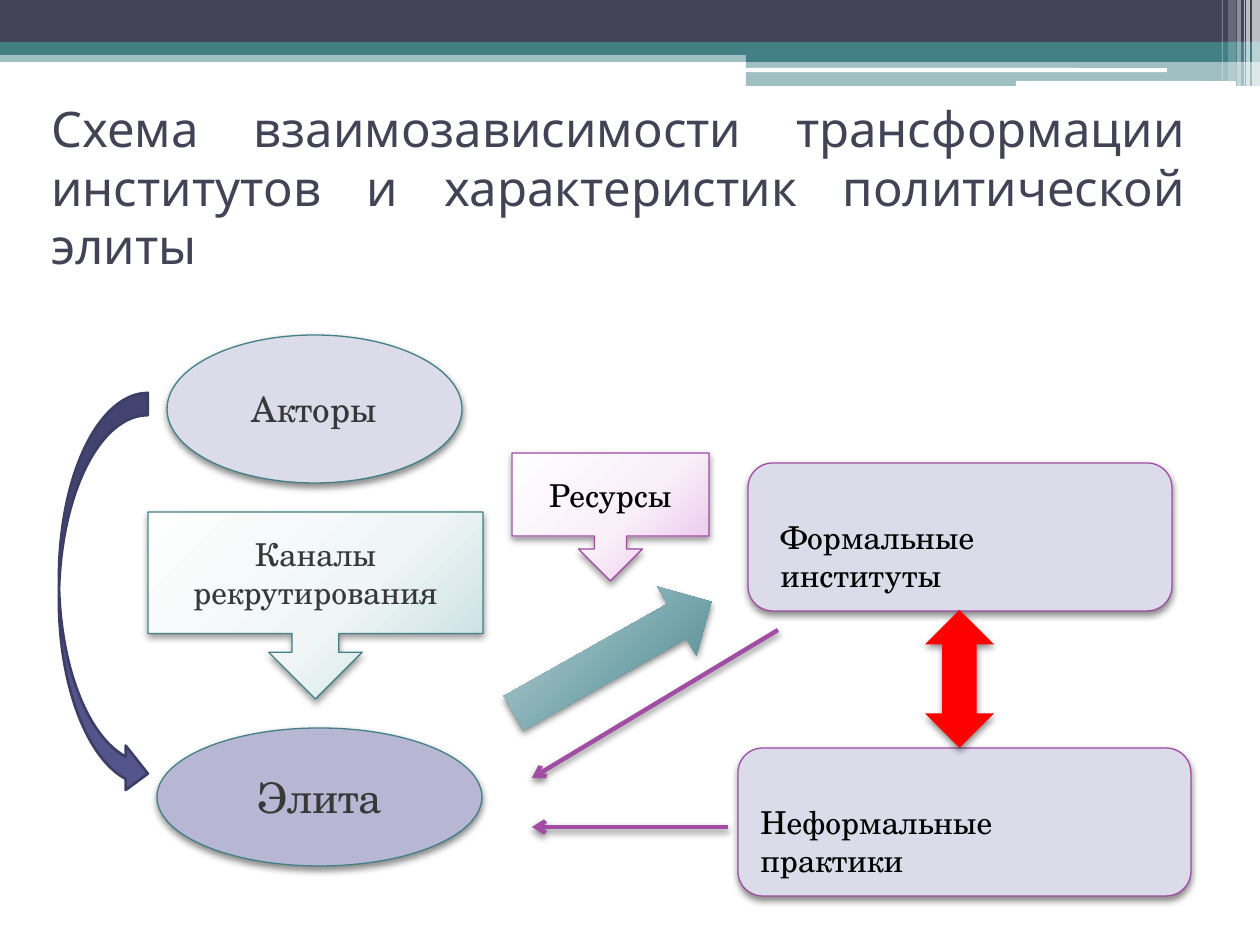
from lxml import etree
from pptx import Presentation
from pptx import util as u
from pptx.dml.color import RGBColor
from pptx.enum import shapes, text
from pptx.oxml import parse_xml
from pptx.oxml.ns import qn, nsdecls

SCALE = 914400 / 126
FONT = "TeX Gyre Schola"
KIND = shapes.MSO_SHAPE
COLORS = {
    "navy": "424456", "teal": "438086", "white": "FFFFFF", "black": "000000",
    "gray": "383838", "pale": "DBDBE9", "lilac": "B7B7D4", "plum": "A04DA3",
    "red": "FF0000", "indigo": "53548A", "edge": "3D3E66",
}
GRADS = {
    "mint": ("FEFEFE", "F0F6F6", "BFD9DD"),
    "steel": ("C7D7DA", "77A7AD", "3E777D"),
    "rose": ("FEFEFF", "F9EFF9", "E8BBEA"),
}


def px(n):
    return u.Emu(round(n * SCALE))


def rgb(name):
    return RGBColor.from_string(COLORS[name])


def shade(spot, alpha=45):
    props = spot._element.spPr
    glow = props.find(qn("a:effectLst"))
    if glow is None:
        glow = etree.SubElement(props, qn("a:effectLst"))
    glow.append(parse_xml(
        f'<a:outerShdw {nsdecls("a")} blurRad="50800" dist="25400" dir="5400000" '
        f'rotWithShape="0"><a:srgbClr val="000000"><a:alpha val="{alpha}000"/>'
        '</a:srgbClr></a:outerShdw>'))


def blend(shape, name):
    stops = "".join(
        f'<a:gs pos="{pos}000"><a:srgbClr val="{tone}"/></a:gs>'
        for pos, tone in zip((0, 55, 100), GRADS[name]))
    shape.fill.solid()
    props = shape._element.spPr
    props.replace(props.find(qn("a:solidFill")), parse_xml(
        f'<a:gradFill {nsdecls("a")} rotWithShape="1"><a:gsLst>{stops}</a:gsLst>'
        '<a:path path="circle"><a:fillToRect l="-40000" t="-90000" r="140000" '
        'b="190000"/></a:path></a:gradFill>'))


def add_form(slide, kind, box, fill, line=None, width=0.75, shadow=45):
    shape = slide.shapes.add_shape(kind, *map(px, box))
    shape.shadow.inherit = False
    if fill in GRADS:
        blend(shape, fill)
    else:
        shape.fill.solid()
        shape.fill.fore_color.rgb = rgb(fill)
    if line:
        shape.line.color.rgb = rgb(line)
        shape.line.width = u.Pt(width)
    else:
        shape.line.fill.background()
    if shadow:
        shade(shape, shadow)
    return shape


def add_bar(slide, box, fill, alpha=100, kind=KIND.RECTANGLE):
    bar = add_form(slide, kind, box, fill, shadow=0)
    if alpha < 100:
        tone = bar._element.spPr.find(qn("a:solidFill"))[0]
        etree.SubElement(tone, qn("a:alpha")).set("val", str(alpha * 1000))


def write(shape, words, size, color, align, anchor, font=FONT):
    frame = shape.text_frame
    frame.word_wrap = True
    frame.vertical_anchor = anchor
    par = frame.paragraphs[0]
    par.text = words
    par.alignment = align
    par.font.size = u.Pt(size)
    par.font.name = font
    par.font.color.rgb = rgb(color)


def add_node(slide, kind, box, fill, line, words, size, color, shadow=45):
    node = add_form(slide, kind, box, fill, line, shadow=shadow)
    write(node, words, size, color, text.PP_ALIGN.CENTER, text.MSO_ANCHOR.MIDDLE)


def add_label(slide, box, words):
    label = slide.shapes.add_textbox(*map(px, box))
    write(label, words, 18, "black", text.PP_ALIGN.LEFT, text.MSO_ANCHOR.TOP)


def add_arrow(slide, start, end):
    arrow = slide.shapes.add_connector(
        shapes.MSO_CONNECTOR.STRAIGHT, *map(px, start + end))
    arrow.line.color.rgb = rgb("plum")
    arrow.line.width = u.Pt(2.5)
    tip = etree.SubElement(arrow.line._get_or_add_ln(), qn("a:tailEnd"))
    tip.set("type", "arrow")
    shade(arrow)


def add_header(slide):
    add_bar(slide, (0, 50, 1260, 12), "teal", 50)
    add_bar(slide, (0, 0, 1260, 43), "navy")
    add_bar(slide, (0, 42, 1260, 13), "teal")
    add_bar(slide, (746, 49, 514, 13), "teal")
    add_bar(slide, (746, 61, 514, 25), "teal", 50)
    for box in ((745, 68, 422, 4), (1016, 81, 220, 5)):
        add_bar(slide, box, "white", kind=KIND.ROUNDED_RECTANGLE)
    for left, width, high, alpha in (
            (1252, 8, 86, 65), (1246, 4, 86, 65), (1244, 1, 86, 60),
            (1237, 4, 86, 40), (1228, 8, 81, 20), (1222, 1, 81, 30)):
        add_bar(slide, (left, 0, width, high), "white", alpha)


def add_title(slide):
    title = slide.shapes.add_textbox(*map(px, (39, 88, 1158, 197)))
    write(title, "Схема взаимозависимости трансформации институтов "
          "и характеристик политической элиты", 28, "navy",
          text.PP_ALIGN.JUSTIFY, text.MSO_ANCHOR.MIDDLE, "Karla")


def add_scheme(slide):
    add_node(slide, KIND.OVAL, (167, 335, 295, 148), "pale", "teal",
             "Акторы", 20, "gray")
    add_node(slide, KIND.DOWN_ARROW_CALLOUT, (148, 512, 335, 187), "mint",
             "teal", "Каналы рекрутирования", 18, "gray", 40)
    add_node(slide, KIND.OVAL, (157, 728, 325, 138), "lilac", "teal",
             "Элита", 24, "gray")
    for box in ((748, 463, 424, 148), (738, 748, 453, 148)):
        add_form(slide, KIND.ROUNDED_RECTANGLE, box, "pale", "plum")
    add_label(slide, (768, 512, 383, 50), "Формальные институты")
    add_label(slide, (748, 797, 408, 50), "Неформальные практики")
    rise = add_form(slide, KIND.LEFT_ARROW, (499, 618, 227, 79), "steel")
    rise.rotation = 150.6
    add_form(slide, KIND.UP_DOWN_ARROW, (925, 610, 69, 138), "red")
    add_arrow(slide, (778, 630), (532, 778))
    add_arrow(slide, (728, 827), (532, 827))
    add_form(slide, KIND.CURVED_RIGHT_ARROW, (59, 393, 89, 403), "indigo",
             "edge", 1.5, 0)
    add_node(slide, KIND.DOWN_ARROW_CALLOUT, (512, 453, 197, 128), "rose",
             "plum", "Ресурсы", 18, "black", 40)


def main():
    deck = Presentation()
    deck.slide_width, deck.slide_height = px(1260), px(945)
    slide = deck.slides.add_slide(deck.slide_layouts[6])
    add_header(slide)
    add_title(slide)
    add_scheme(slide)
    deck.save("out.pptx")


if __name__ == "__main__":
    main()
